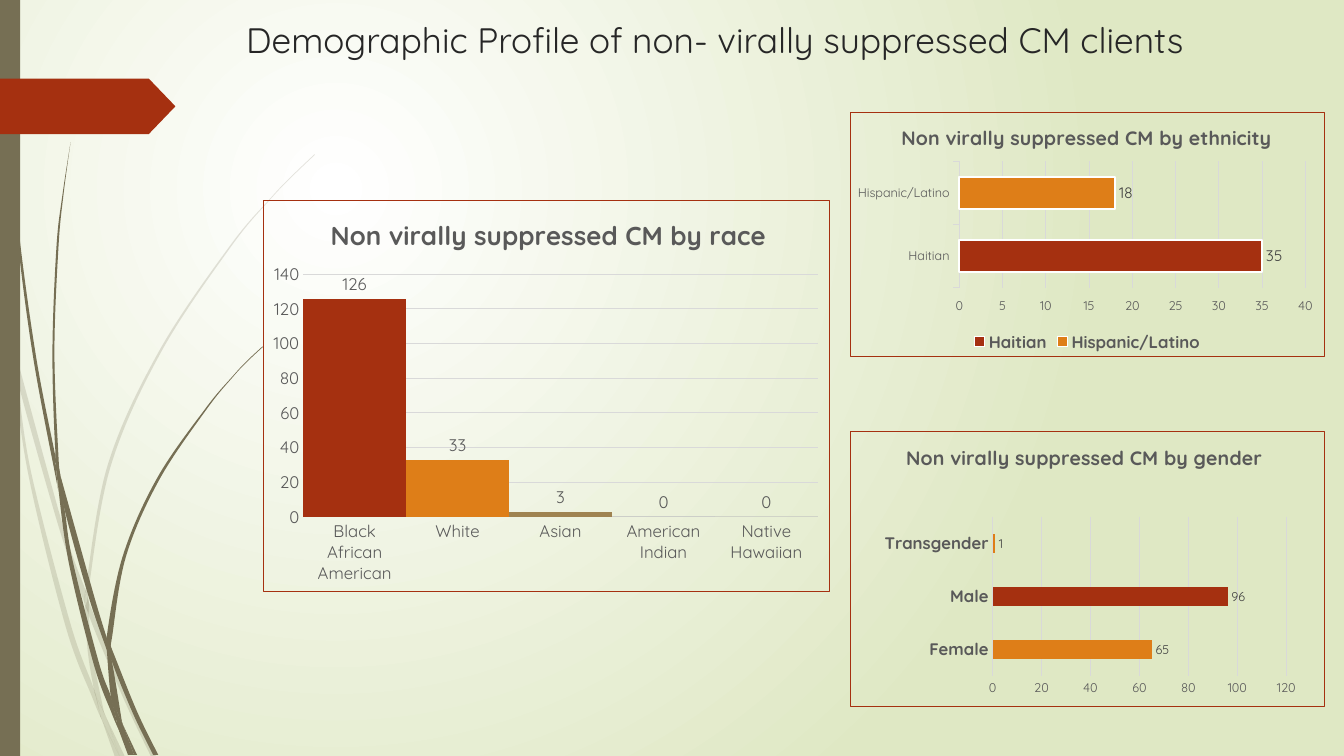
from lxml import etree
from pptx import Presentation
from pptx.chart.data import CategoryChartData
from pptx.dml.color import RGBColor
from pptx.enum import chart as ch, shapes, text
from pptx.oxml import parse_xml
from pptx.oxml.ns import nsdecls, qn
from pptx.util import Inches, Pt

FONT = "Quicksand"
RED, ORANGE, TAN, GREEN, LIME = "A53010", "DE7E18", "9F8351", "728653", "92AA4C"
OLIVE, GREY, DARK, GRID = "766F54", "595959", "404040", "D9D9D9"

# Grass pieces: knots of the left edge downwards, then of the right edge upwards
FAINT_GRASS = [
    ([(0, 2.82), (0, 2.99), (.1, 3.44), (.11, 3.5)], [(.11, 3.5), (.09, 3.22), (0, 2.82)]),
    ([(.14, 3.45), (.17, 3.76), (.58, 5.22), (.84, 5.99)],
     [(.85, 5.86), (.62, 5.2), (.14, 3.45)]),
    ([(.88, 5.96), (.88, 6.1), (1.23, 6.94), (1.5, 7.51)],
     [(1.55, 7.51), (1.27, 6.92), (.92, 6.07), (.88, 5.96)]),
    ([(1.05, 7.11), (1.19, 7.51)], [(1.24, 7.51), (1.05, 7.11)]),
    ([(.11, 3.5), (.28, 4.7), (.65, 6.21), (.92, 6.93), (1.01, 7.14)],
     [(.99, 7.07), (.93, 6.83), (.7, 6.19), (.31, 4.69), (.17, 3.76), (.11, 3.5)]),
    ([(.84, 5.99), (.87, 6.46), (.93, 6.83), (.96, 6.92), (1.05, 7.11)],
     [(1.03, 7.06), (.91, 6.46), (.88, 6.1), (.84, 5.99)]),
    ([(3.12, 1.53), (2.89, 1.75), (2.68, 1.97), (2.28, 2.44), (1.58, 3.48), (1.07, 4.61),
      (.85, 5.84), (.85, 5.86)],
     [(.88, 5.96), (.88, 5.84), (1.1, 4.62), (1.6, 3.49), (2.29, 2.45), (2.68, 1.98),
      (2.9, 1.75), (3.12, 1.54)]),
    ([(1.01, 7.14), (1.14, 7.51)], [(1.19, 7.51), (1.01, 7.14)]),
    ([(.85, 5.86), (.84, 5.99), (.88, 6.08)], [(.88, 6.1), (.88, 5.96), (.85, 5.86)]),
    ([(.93, 6.83), (.99, 7.07), (1.01, 7.14), (1.19, 7.51)],
     [(1.19, 7.51), (1.05, 7.11), (.96, 6.92), (.93, 6.83)]),
]
DARK_GRASS = [
    ([(.03, 0), (.04, .48), (.07, 1.1), (.17, 2.33), (.33, 3.55), (.56, 4.77), (.57, 4.81)],
     [(.55, 4.57), (.55, 4.53), (.36, 3.55), (.19, 2.32), (.08, 1.09), (.05, .48), (.04, 0)]),
    ([(.6, 4.72), (.64, 5.05), (.88, 5.92), (1.06, 6.45)],
     [(1.06, 6.33), (.93, 5.9), (.6, 4.72)]),
    ([(1.1, 6.41), (1.11, 6.56), (1.32, 7.08), (1.52, 7.49)],
     [(1.57, 7.49), (1.36, 7.06), (1.13, 6.49), (1.1, 6.41)]),
    ([(.57, 4.77), (.68, 5.57), (.93, 6.59), (1.11, 7.08), (1.17, 7.22)],
     [(1.16, 7.17), (1.1, 6.91), (.98, 6.57), (.72, 5.56), (.64, 5.05), (.57, 4.77)]),
    ([(.7, 1.41), (.62, 1.93), (.56, 2.45), (.52, 3.49), (.55, 4.49), (.6, 4.72)],
     [(.6, 4.72), (.58, 4.53), (.54, 3.49), (.58, 2.45), (.63, 1.93), (.7, 1.41)]),
    ([(1.22, 7.19), (1.33, 7.49)], [(1.36, 7.49), (1.22, 7.19)]),
    ([(.55, 4.49), (.55, 4.53), (.57, 4.77), (.64, 5.05)],
     [(.64, 5.05), (.6, 4.72), (.55, 4.49)]),
    ([(2.6, 3.44), (2.45, 3.58), (2.31, 3.73), (2.04, 4.05), (1.56, 4.74), (1.22, 5.51),
      (1.06, 6.31), (1.1, 6.41)],
     [(1.1, 6.41), (1.11, 6.33), (1.25, 5.52), (1.58, 4.76), (2.05, 4.06), (2.31, 3.74),
      (2.45, 3.59), (2.61, 3.44)]),
    ([(1.17, 7.22), (1.27, 7.49)], [(1.31, 7.49), (1.17, 7.22)]),
    ([(1.06, 6.45), (1.1, 6.91), (1.16, 7.06), (1.22, 7.19)],
     [(1.21, 7.16), (1.11, 6.56), (1.06, 6.45)]),
    ([(1.06, 6.31), (1.06, 6.45), (1.11, 6.56)], [(1.1, 6.41), (1.06, 6.31)]),
    ([(1.1, 6.91), (1.16, 7.17), (1.17, 7.22), (1.3, 7.49)],
     [(1.33, 7.49), (1.22, 7.19), (1.16, 7.06), (1.1, 6.91)]),
]


def paint(fill, color):
    fill.solid()
    fill.fore_color.rgb = RGBColor.from_string(color)


def set_font(font, size, color, bold=False):
    font.name, font.size, font.bold = FONT, Pt(size), bold
    font.color.rgb = RGBColor.from_string(color)


def set_line(line, color, width=0.75):
    line.color.rgb = RGBColor.from_string(color)
    line.width = Pt(width)


def set_background(s):
    fill = s.background.fill
    fill.gradient()
    for stop, color in zip(fill.gradient_stops, ("FFFFFF", "DFE8C4")):
        stop.color.rgb = RGBColor.from_string(color)
    grad = s.element.find(".//" + qn("a:gradFill"))
    grad.replace(grad.find(qn("a:lin")), parse_xml(
        f'<a:path {nsdecls("a")} path="circle">'
        '<a:fillToRect l="50000" t="50000" r="100000" b="100000"/></a:path>'))


def finish_shape(sp, color):
    paint(sp.fill, color)
    sp.line.fill.background()
    sp.shadow.inherit = False


def curve_edge(lines, knots):
    """Turn the straight steps between the knots into cubic curves."""
    padded = [knots[0], *knots, knots[-1]]
    for line, a, b, c, d in zip(lines, padded, padded[1:], padded[2:], padded[3:]):
        first = [q + (r - p) / 6 for p, q, r in zip(a, b, c)]
        second = [q - (r - p) / 6 for p, q, r in zip(b, c, d)]
        curve = etree.Element(qn("a:cubicBezTo"))
        for x, y in (first, second, c):
            etree.SubElement(curve, qn("a:pt"), x=str(round(x)), y=str(round(y)))
        line.getparent().replace(line, curve)


def add_grass(s, left, right, opacity):
    outline = [(Inches(x), Inches(y)) for x, y in left + right]
    builder = s.shapes.build_freeform(*outline[0])
    builder.add_line_segments(outline[1:], close=True)
    sp = builder.convert_to_shape()
    finish_shape(sp, OLIVE)
    lines = sp.element.findall(".//" + qn("a:lnTo"))
    knots = [(x - sp.left, y - sp.top) for x, y in outline]
    n = len(left)
    curve_edge(lines[:n - 1], knots[:n])
    curve_edge(lines[n:], knots[n:])
    if opacity < 100:
        clr = sp.element.find(".//" + qn("a:srgbClr"))
        etree.SubElement(clr, qn("a:alpha")).set("val", str(opacity * 1000))


def add_preset(s, kind, box, color):
    sp = s.shapes.add_shape(kind, *map(Inches, box))
    finish_shape(sp, color)
    return sp


def add_title(s, wording):
    title = s.shapes.title
    title.left, title.top, title.width, title.height = map(Inches, (2.34, 0.13, 9.93, 0.84))
    tf = title.text_frame
    tf.text = wording
    tf.vertical_anchor = text.MSO_ANCHOR.TOP
    p = tf.paragraphs[0]
    p.alignment = text.PP_ALIGN.LEFT
    set_font(p.runs[0].font, 25.2, "262626")


def place(parent, values, after=None):
    """Give a chart part a fixed place, in shares of the chart."""
    for old in parent.findall(qn("c:layout")):
        parent.remove(old)
    target = "" if after else '<c:layoutTarget val="inner"/>'
    modes = "".join(f'<c:{k}Mode val="edge"/>' for k in "xy")
    sizes = "".join(f'<c:{k} val="{v}"/>' for k, v in zip("xywh", values))
    layout = parse_xml(f'<c:layout {nsdecls("c")}><c:manualLayout>{target}{modes}{sizes}'
                       '</c:manualLayout></c:layout>')
    if after:
        parent.find(qn(after)).addnext(layout)
    else:
        parent.insert(0, layout)


def add_bars(s, kind, box, title, title_size, title_at, plot_at, data, colors, gap,
             scale, cat_font, val_size, label_font, tick="NONE", legend=False):
    cd = CategoryChartData()
    cd.categories = list(data)
    cd.add_series("Series 1", list(data.values()))
    chart = s.shapes.add_chart(kind, *map(Inches, box), cd).chart
    set_font(chart.font, 10, "000000")

    # Title, frame and plot area
    tf = chart.chart_title.text_frame
    tf.text = title
    set_font(tf.paragraphs[0].runs[0].font, title_size, GREY, True)
    place(chart.chart_title.element, title_at, "c:tx")
    area = chart.element.find(qn("c:chart"))
    place(area.find(qn("c:plotArea")), plot_at)
    area.addnext(parse_xml(
        f'<c:spPr {nsdecls("c", "a")}><a:noFill/><a:ln w="9525"><a:solidFill>'
        f'<a:srgbClr val="{RED}"/></a:solidFill></a:ln></c:spPr>'))

    # Axes
    cat, val = chart.category_axis, chart.value_axis
    for axis in (cat, val):
        axis.major_tick_mark = ch.XL_TICK_MARK[tick]
        axis.minor_tick_mark = ch.XL_TICK_MARK.NONE
    set_font(cat.tick_labels.font, *cat_font)
    set_font(val.tick_labels.font, val_size, GREY)
    set_line(cat.format.line, GRID)
    val.format.line.fill.background()
    set_line(val.major_gridlines.format.line, GRID)
    val.minimum_scale = 0
    val.maximum_scale, val.major_unit = scale

    # Bars and their labels
    plot = chart.plots[0]
    plot.gap_width, plot.vary_by_categories = gap, legend
    series = plot.series[0]
    for i, color in enumerate(colors):
        fmt = series.points[i].format
        paint(fmt.fill, color)
        if legend:
            set_line(fmt.line, "FFFFFF", 1.5)
    labels = series.data_labels
    labels.show_value = True
    labels.position = ch.XL_LABEL_POSITION.OUTSIDE_END
    set_font(labels.font, *label_font)

    chart.has_legend = legend
    if legend:
        chart.legend.position = ch.XL_LEGEND_POSITION.BOTTOM
        chart.legend.include_in_layout = False
        set_font(chart.legend.font, 12, GREY, True)


def main():
    prs = Presentation()
    prs.slide_width, prs.slide_height = Inches(13.33), Inches(7.5)
    s = prs.slides.add_slide(prs.slide_layouts[5])
    set_background(s)

    # Side decoration
    for grass, opacity in ((FAINT_GRASS, 20), (DARK_GRASS, 100)):
        for left, right in grass:
            add_grass(s, left, right, opacity)
    add_preset(s, shapes.MSO_SHAPE.RECTANGLE, (0, 0, 0.2, 7.5), OLIVE)
    tag = add_preset(s, shapes.MSO_SHAPE.PENTAGON, (0, 0.78, 1.74, 0.55), RED)
    tag.adjustments[0] = 0.48
    add_title(s, "Demographic Profile of non- virally suppressed CM clients")

    # Charts
    column, bar = ch.XL_CHART_TYPE.COLUMN_CLUSTERED, ch.XL_CHART_TYPE.BAR_CLUSTERED
    add_bars(s, column, (2.61, 1.98, 5.62, 3.89), "Non virally suppressed CM by race", 18.6,
             (0.11, 0.03), (0.07, 0.19, 0.91, 0.62),
             {"Black African American": 126, "White": 33, "Asian": 3,
              "American Indian": 0, "Native Hawaiian": 0},
             (RED, ORANGE, TAN, GREEN, LIME), 0, (140, 20), (12, GREY), 12, (12, GREY))
    add_bars(s, bar, (8.43, 1.11, 4.71, 2.43), "Non virally suppressed CM by ethnicity", 14,
             (0.1, 0.03), (0.23, 0.2, 0.73, 0.52), {"Haitian": 35, "Hispanic/Latino": 18},
             (RED, ORANGE), 100, (40, 5), (9, GREY), 9, (11, DARK), "OUTSIDE", True)
    add_bars(s, bar, (8.43, 4.28, 4.71, 2.73), "Non virally suppressed CM by gender", 14,
             (0.11, 0.03), (0.3, 0.31, 0.62, 0.58), {"Female": 65, "Male": 96, "Transgender": 1},
             (ORANGE, RED, ORANGE), 182, (120, 20), (12, GREY, True), 9, (9, DARK))
    prs.save("out.pptx")


if __name__ == "__main__":
    main()
